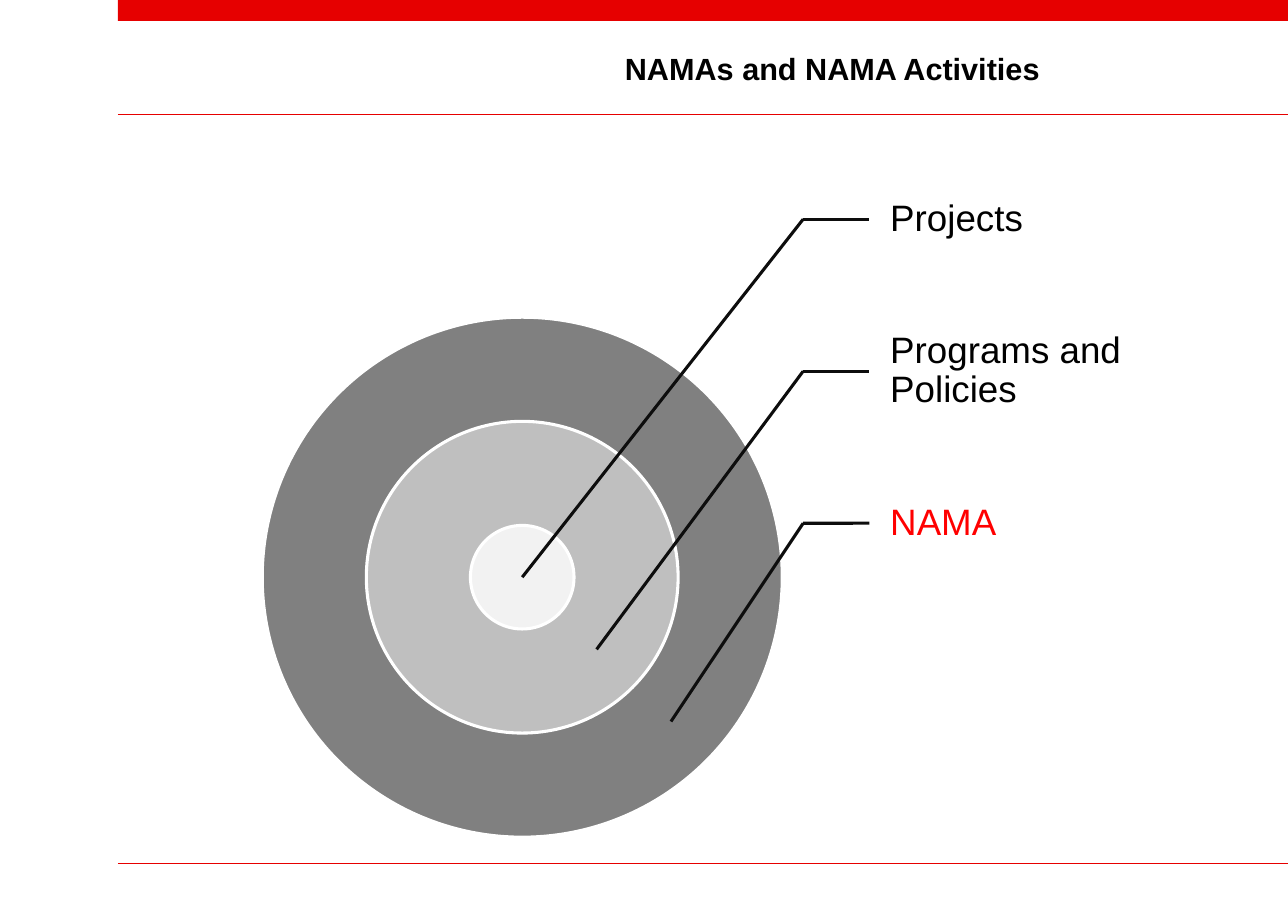
import pptx
import pptx.dml.color
import pptx.enum.shapes
import pptx.enum.text
import pptx.oxml
import pptx.util

WIDTH, HEIGHT = 11.69, 8.27
MARGIN = 1.07
RED, INK, WHITE = "E60000", "0D0D0D", "FFFFFF"

TITLE = "NAMAs and NAMA Activities"
CENTER = (4.74, 5.24)
RINGS = [(4.72, "808080"), (2.83, "BFBFBF"), (0.94, "F2F2F2")]  # diameter, fill
LABELS = [("Projects", "000000"), ("Programs and Policies", "000000"), ("NAMA", "FF0000")]
LABEL_LEFT, LABEL_TOP, LABEL_WIDTH, LABEL_HEIGHT = 7.89, 1.3, 2.36, 1.38
ELBOW = 7.29
TARGET_STEP = (0.675, 0.655)  # from one leader's end to the next

TITLE_FORMAT = {"size": pptx.util.Pt(20), "bold": True, "name": "Arial"}
LABEL_FORMAT = {"size": pptx.util.Pt(24), "name": "Arial"}


def inches(*lengths):
    return [pptx.util.Inches(length) for length in lengths]


def color(hex_value):
    return pptx.dml.color.RGBColor.from_string(hex_value)


def add_filled(slide, preset, box, fill):
    shape = slide.shapes.add_shape(preset, *inches(*box))
    shape.shadow.inherit = False
    shape.fill.solid()
    shape.fill.fore_color.rgb = color(fill)
    shape.line.fill.background()
    return shape


def add_line(slide, start, end, line_color, points):
    line = slide.shapes.add_connector(
        pptx.enum.shapes.MSO_CONNECTOR.STRAIGHT, *inches(*start, *end))
    line.line.color.rgb = color(line_color)
    line.line.width = pptx.util.Pt(points)
    effects = '<a:effectLst xmlns:a="http://schemas.openxmlformats.org/drawingml/2006/main"/>'
    line._element.spPr.append(pptx.oxml.parse_xml(effects))
    return line


def add_text(slide, box, text, text_color, font_format, align, insets):
    """Add a wrapped, vertically centred text box; insets run left, top, right, bottom."""
    shape = slide.shapes.add_textbox(*inches(*box))
    frame = shape.text_frame
    frame.word_wrap = True
    frame.vertical_anchor = pptx.enum.text.MSO_ANCHOR.MIDDLE
    for side, inset in zip(("left", "top", "right", "bottom"), inches(*insets)):
        setattr(frame, "margin_" + side, inset)
    paragraph = frame.paragraphs[0]
    paragraph.alignment = align
    run = paragraph.add_run()
    run.text = text
    run.font.color.rgb = color(text_color)
    for name, value in font_format.items():
        setattr(run.font, name, value)
    return shape


def add_rings(slide):
    for diameter, fill in RINGS:
        left, top = (middle - diameter / 2 for middle in CENTER)
        ring = add_filled(slide, pptx.enum.shapes.MSO_SHAPE.OVAL,
                          (left, top, diameter, diameter), fill)
        ring.line.color.rgb = color(WHITE)
        ring.line.width = pptx.util.Pt(2)


def add_labels(slide):
    for row, (text, text_color) in enumerate(LABELS):
        top = LABEL_TOP + row * LABEL_HEIGHT
        middle = top + LABEL_HEIGHT / 2
        target = [start + row * step for start, step in zip(CENTER, TARGET_STEP)]
        label = add_text(slide, (LABEL_LEFT, top, LABEL_WIDTH, LABEL_HEIGHT), text, text_color,
                         LABEL_FORMAT, pptx.enum.text.PP_ALIGN.LEFT, (0.19, 0.03, 0.03, 0.03))
        label.text_frame.paragraphs[0].line_spacing = 0.9
        stub = add_line(slide, (ELBOW, middle), (LABEL_LEFT, middle), INK, 2)
        stub.end_connect(label, 1)
        add_line(slide, (ELBOW, middle), target, INK, 2)


def main():
    presentation = pptx.Presentation()
    presentation.slide_width, presentation.slide_height = inches(WIDTH, HEIGHT)
    slide = presentation.slides.add_slide(presentation.slide_layouts[6])
    add_filled(slide, pptx.enum.shapes.MSO_SHAPE.RECTANGLE,
               (MARGIN, 0, WIDTH - MARGIN, 0.19), RED)
    for rule in (1.04, 7.84):
        add_line(slide, (MARGIN, rule), (WIDTH, rule), RED, 0.7)
    add_text(slide, (4, 0.29, 7.11, 0.65), TITLE, "000000", TITLE_FORMAT,
             pptx.enum.text.PP_ALIGN.CENTER, (0.1, 0.05, 0.1, 0.05))
    add_rings(slide)
    add_labels(slide)
    presentation.save("out.pptx")


if __name__ == "__main__":
    main()
